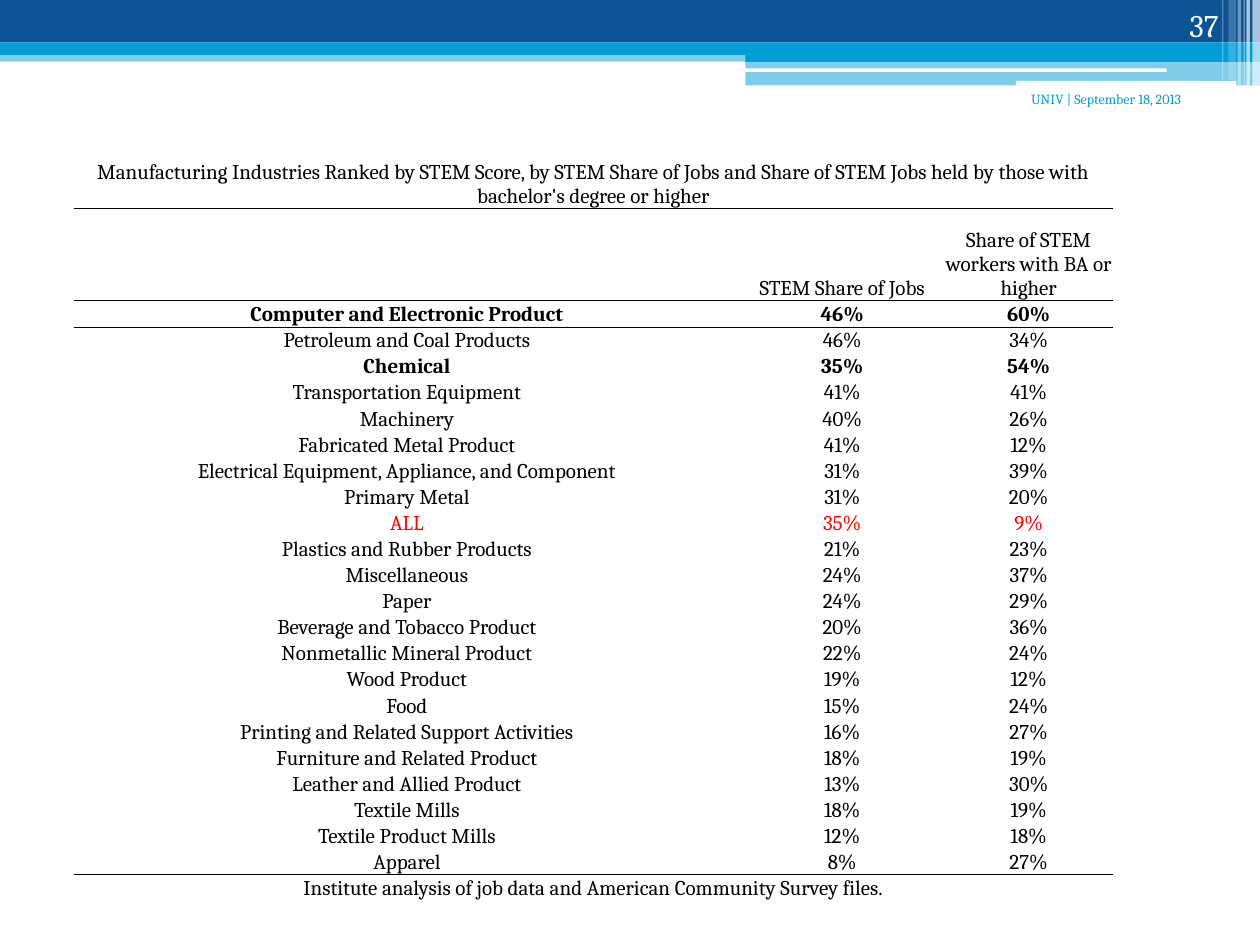
from lxml import etree
from pptx import Presentation
from pptx.dml.color import RGBColor
from pptx.enum import shapes, text
from pptx.oxml import ns
from pptx.util import Pt

NAVY, BLUE, WHITE, BLACK, RED = "0B5394", "009DD9", "FFFFFF", "000000", "FF0000"


def paint(fill, color, alpha=100):
    """Solid fill with opacity in percent."""
    fill.solid()
    fill.fore_color.rgb = RGBColor.from_string(color)
    if alpha < 100:
        tone = fill._xPr.find(".//" + ns.qn("a:srgbClr"))
        etree.SubElement(tone, ns.qn("a:alpha"), val=str(alpha * 1000))


def write(frame, words, size, color, align, bold=False):
    para = frame.paragraphs[0]
    para.alignment = align
    run = para.add_run()
    run.text = words
    run.font.name = "Cambria"
    run.font.size = Pt(size)
    run.font.bold = bold
    paint(run.font.fill, color)


deck = Presentation()
deck.slide_width, deck.slide_height = Pt(720), Pt(540)
slide = deck.slides.add_slide(deck.slide_layouts[6])

# Header bands and stripes: left, top, width, height, colour, opacity
RECT, ROUND = shapes.MSO_SHAPE.RECTANGLE, shapes.MSO_SHAPE.ROUNDED_RECTANGLE
bands = [
    (RECT, 0, 28.8, 720, 6.5, BLUE, 50),
    (RECT, 0, 0, 720, 24.2, NAVY, 100),
    (RECT, 0, 24.2, 720, 7.2, BLUE, 100),
    (RECT, 426, 28.2, 294, 7.2, BLUE, 100),
    (RECT, 426, 34.8, 294, 14, BLUE, 50),
    (ROUND, 425.5, 39.1, 241.2, 2, WHITE, 100),
    (ROUND, 580.5, 46.3, 126, 2.8, WHITE, 100),
    (RECT, 715.7, 0, 4.3, 48.8, WHITE, 65),
    (RECT, 712.2, 0, 2, 48.8, WHITE, 65),
    (RECT, 710.6, 0, 0.7, 48.8, WHITE, 60),
    (RECT, 707.2, 0, 2, 48.8, WHITE, 40),
    (RECT, 702, 0, 4.3, 46.1, WHITE, 20),
    (RECT, 698.4, 0, 0.7, 46.1, WHITE, 30),
]
for kind, left, top, wide, high, color, alpha in bands:
    band = slide.shapes.add_shape(kind, Pt(left), Pt(top), Pt(wide), Pt(high))
    band.shadow.inherit = False
    band.line.fill.background()
    paint(band.fill, color, alpha)

TOP, BOTTOM = text.MSO_ANCHOR.TOP, text.MSO_ANCHOR.BOTTOM
labels = [
    (414, 48.24, 270, 36, TOP, "UNIV | September 18, 2013 ", 8, BLUE),
    (643.7, 0, 59.8, 28.8, BOTTOM, "37", 18, WHITE),
]
for left, top, wide, high, anchor, words, size, color in labels:
    box = slide.shapes.add_textbox(Pt(left), Pt(top), Pt(wide), Pt(high))
    box.text_frame.word_wrap = True
    box.text_frame.vertical_anchor = anchor
    write(box.text_frame, words, size, color, text.PP_ALIGN.RIGHT)

# Ranking table
rows = [
    ("Manufacturing Industries Ranked by STEM Score, by STEM Share of Jobs and "
     "Share of STEM Jobs held by those with bachelor's degree or higher",),
    ("", "STEM Share of Jobs", "Share of STEM workers with BA or higher"),
    ("Computer and Electronic Product", "46%", "60%"),
    ("Petroleum and Coal Products", "46%", "34%"),
    ("Chemical", "35%", "54%"),
    ("Transportation Equipment", "41%", "41%"),
    ("Machinery", "40%", "26%"),
    ("Fabricated Metal Product", "41%", "12%"),
    ("Electrical Equipment, Appliance, and Component", "31%", "39%"),
    ("Primary Metal", "31%", "20%"),
    ("ALL", "35%", "9%"),
    ("Plastics and Rubber Products", "21%", "23%"),
    ("Miscellaneous", "24%", "37%"),
    ("Paper", "24%", "29%"),
    ("Beverage and Tobacco Product", "20%", "36%"),
    ("Nonmetallic Mineral Product", "22%", "24%"),
    ("Wood Product", "19%", "12%"),
    ("Food", "15%", "24%"),
    ("Printing and Related Support Activities", "16%", "27%"),
    ("Furniture and Related Product", "18%", "19%"),
    ("Leather and Allied Product", "13%", "30%"),
    ("Textile Mills", "18%", "19%"),
    ("Textile Product Mills", "12%", "18%"),
    ("Apparel", "8%", "27%"),
    ("Institute analysis of job data and American Community Survey files.",),
]
widths = [380.9, 116.6, 96.5]
heights = [28.6, 52.6] + [14.56] * (len(rows) - 2)
last = len(rows) - 1
ruled = {0, 1, last - 1}  # rows with a line below
strong = {"Computer and Electronic Product", "Chemical"}

table = slide.shapes.add_table(len(rows), len(widths), Pt(42.1), Pt(90),
                               Pt(sum(widths)), Pt(sum(heights))).table
table.first_row = table.horz_banding = False
style = table._tbl.tblPr.find(ns.qn("a:tableStyleId"))
style.text = "{2D5ABB26-0587-4C30-8999-92F81FD0307C}"  # no style, no grid
for col, wide in zip(table.columns, widths):
    col.width = Pt(wide)

for r, (row, high) in enumerate(zip(rows, heights)):
    table.rows[r].height = Pt(high)
    if len(row) == 1:
        table.cell(r, 0).merge(table.cell(r, 2))
    color = RED if row[0] == "ALL" else BLACK
    for c in range(len(widths)):
        cell = table.cell(r, c)
        cell.margin_left = cell.margin_right = cell.margin_top = Pt(0.5)
        cell.margin_bottom = 0
        cell.vertical_anchor = BOTTOM
        if c < len(row) and row[c]:
            write(cell.text_frame, row[c], 12, color,
                  text.PP_ALIGN.CENTER, row[0] in strong)
        props = cell._tc.get_or_add_tcPr()
        for tag, edge in (("a:lnT", r - 1), ("a:lnB", r)):
            if edge in ruled:
                line = etree.SubElement(props, ns.qn(tag), w=str(Pt(0.5)))
                solid = etree.SubElement(line, ns.qn("a:solidFill"))
                etree.SubElement(solid, ns.qn("a:srgbClr"), val=BLACK)
        cell.fill.background()

deck.save("out.pptx")
